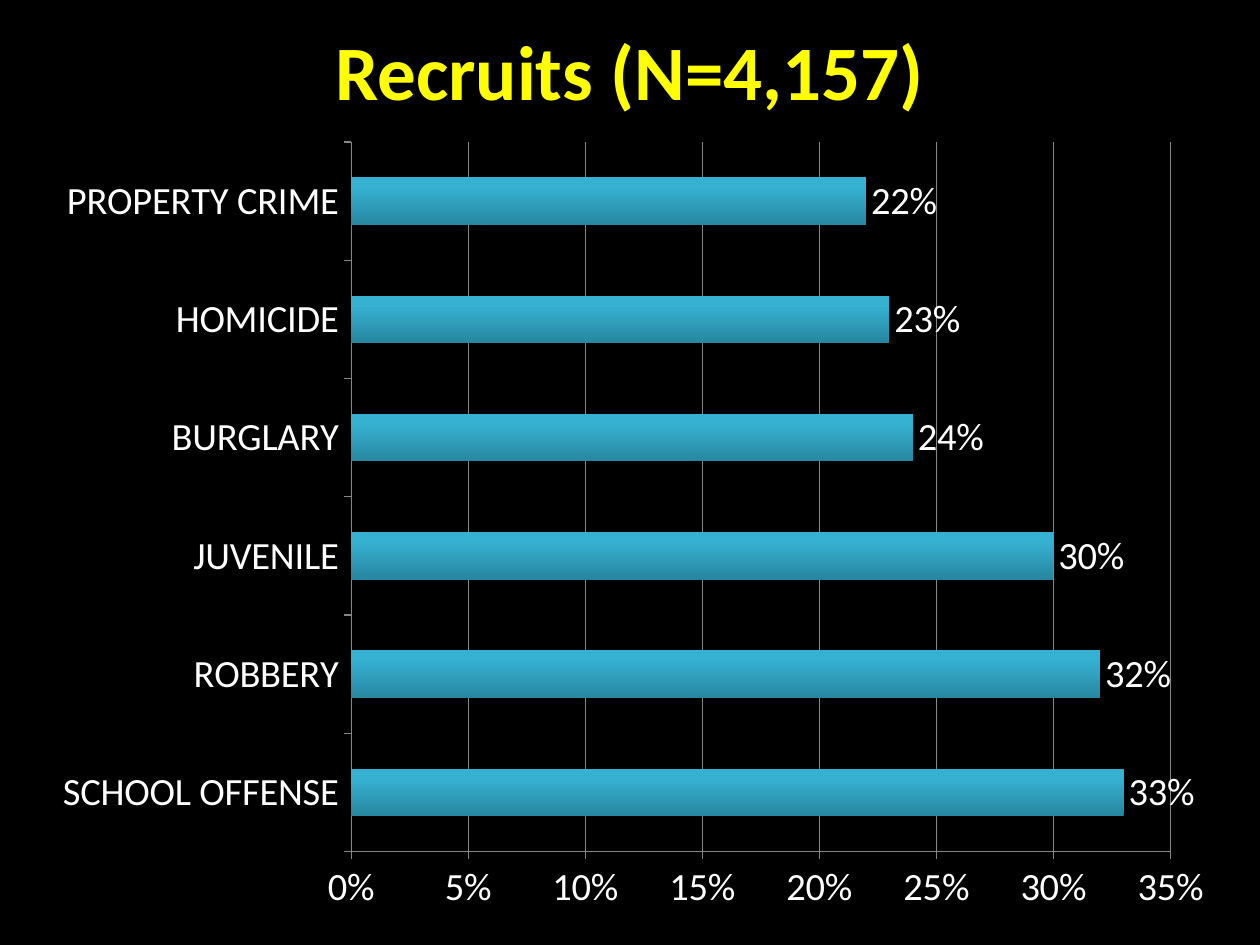
from pptx import Presentation
from pptx.chart.data import CategoryChartData
from pptx.dml.color import RGBColor
from pptx.enum.chart import XL_CHART_TYPE, XL_LABEL_POSITION, XL_TICK_MARK
from pptx.enum.text import MSO_ANCHOR, PP_ALIGN
from pptx.util import Inches, Pt

BAR = XL_CHART_TYPE.BAR_CLUSTERED
OUTSIDE_END = XL_LABEL_POSITION.OUTSIDE_END
TICK_OUT = XL_TICK_MARK.OUTSIDE
MIDDLE = MSO_ANCHOR.MIDDLE
CENTER = PP_ALIGN.CENTER

BLACK = RGBColor(0x00, 0x00, 0x00)
WHITE = RGBColor(0xFF, 0xFF, 0xFF)
YELLOW = RGBColor(0xFF, 0xFF, 0x00)
GREY = RGBColor(0x86, 0x86, 0x86)
TEAL_DARK = RGBColor(0x27, 0x87, 0xA0)
TEAL_LIGHT = RGBColor(0x36, 0xB1, 0xD2)

FONT = "Calibri"
TITLE_ONLY = 5
OFFENSES = {
    "SCHOOL OFFENSE": 0.33,
    "ROBBERY": 0.32,
    "JUVENILE": 0.30,
    "BURGLARY": 0.24,
    "HOMICIDE": 0.23,
    "PROPERTY CRIME": 0.22,
}


def style_font(font, size, color, bold=False):
    font.name = FONT
    font.size = Pt(size)
    font.bold = bold
    font.color.rgb = color


def style_line(line):
    line.color.rgb = GREY
    line.width = Pt(0.75)


def set_title(slide, text):
    sp = slide.shapes.title
    sp.left, sp.top = Inches(0.5), Inches(0.11)
    sp.width, sp.height = Inches(9), Inches(0.89)
    tf = sp.text_frame
    tf.text = text
    tf.vertical_anchor = MIDDLE
    p = tf.paragraphs[0]
    p.alignment = CENTER
    style_font(p.font, 44, YELLOW, bold=True)


def style_axes(chart):
    for axis in (chart.category_axis, chart.value_axis):
        axis.major_tick_mark = TICK_OUT
        style_line(axis.format.line)
    chart.category_axis.has_major_gridlines = False
    values = chart.value_axis
    values.minimum_scale, values.maximum_scale = 0, 0.35
    values.major_unit = 0.05
    values.has_major_gridlines = True
    style_line(values.major_gridlines.format.line)
    values.tick_labels.number_format = "0%"
    values.tick_labels.number_format_is_linked = False


def style_bars(plot):
    plot.gap_width = 150
    plot.vary_by_categories = False
    fill = plot.series[0].format.fill
    fill.gradient()
    fill.gradient_angle = 90
    bottom, top = fill.gradient_stops
    bottom.color.rgb, bottom.position = TEAL_DARK, 0
    top.color.rgb, top.position = TEAL_LIGHT, 0.8
    plot.has_data_labels = True
    labels = plot.data_labels
    labels.show_value = True
    labels.number_format = "0%"
    labels.number_format_is_linked = False
    labels.position = OUTSIDE_END
    style_font(labels.font, 22, WHITE)


def add_offense_chart(slide):
    data = CategoryChartData(number_format="0%")
    data.categories = OFFENSES.keys()
    data.add_series("Series 1", OFFENSES.values())
    chart = slide.shapes.add_chart(
        BAR, Inches(0.31), Inches(1), Inches(9.43), Inches(6.36), data
    ).chart
    chart.has_legend = False
    chart.has_title = False
    style_font(chart.font, 22, WHITE)
    style_axes(chart)
    style_bars(chart.plots[0])


def main():
    prs = Presentation()
    prs.slide_width, prs.slide_height = Inches(10), Inches(7.5)
    slide = prs.slides.add_slide(prs.slide_layouts[TITLE_ONLY])
    background = slide.background.fill
    background.solid()
    background.fore_color.rgb = BLACK
    set_title(slide, "Recruits (N=4,157)")
    add_offense_chart(slide)
    prs.save("out.pptx")


if __name__ == "__main__":
    main()
